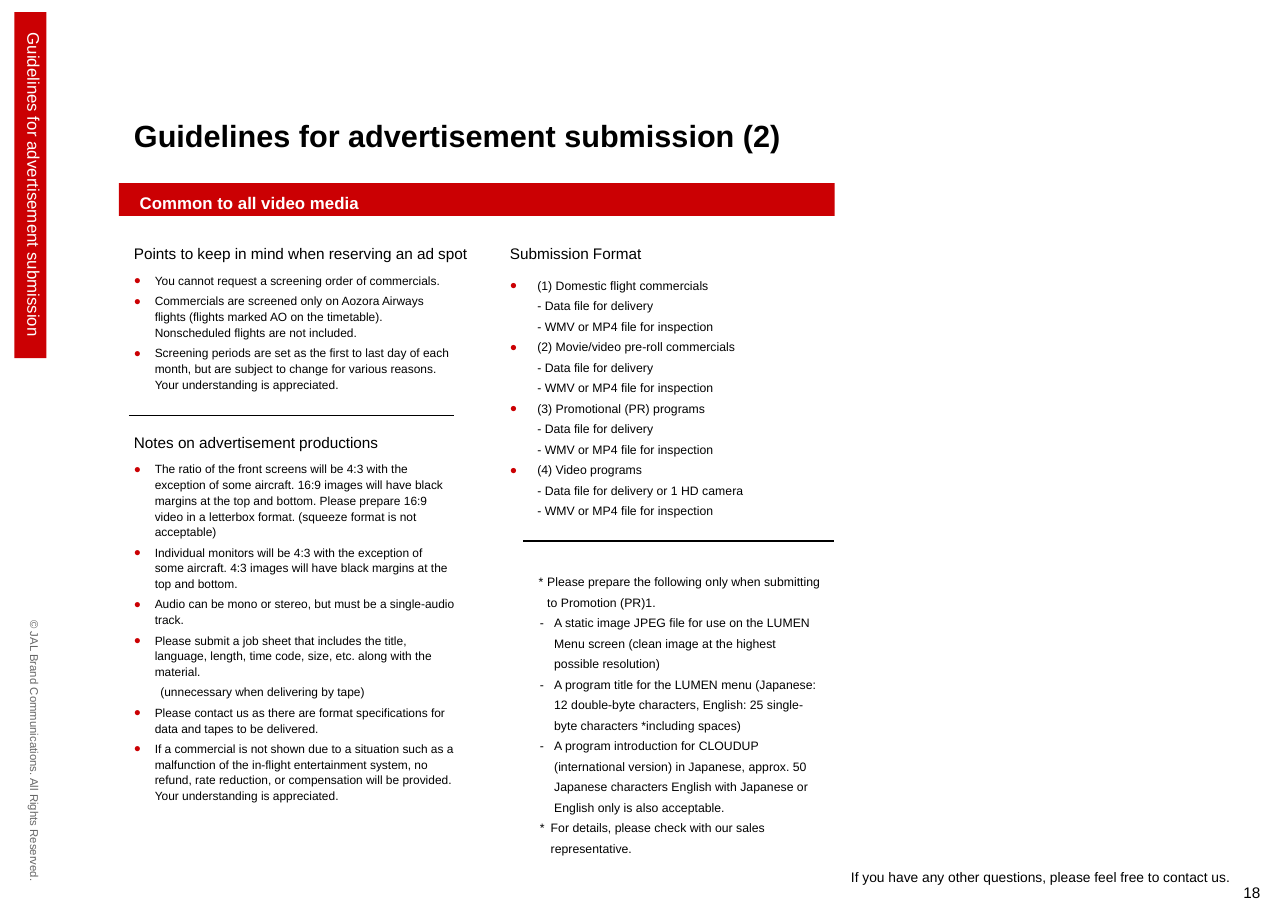
import copy
import pptx
import pptx.util
import pptx.dml.color
import pptx.enum.shapes
import pptx.enum.text
import pptx.oxml.ns
import lxml.etree

Cm = pptx.util.Cm
qn = pptx.oxml.ns.qn
RED, BLACK, WHITE, GREY = "CB0003", "000000", "FFFFFF", "666666"
ALIGN = pptx.enum.text.PP_ALIGN

BOOKING = [
    "You cannot request a screening order of commercials.",
    "Commercials are screened only on Aozora Airways flights (flights marked AO on the timetable). "
    "Nonscheduled flights are not included.",
    "Screening periods are set as the first to last day of each month, but are subject to change "
    "for various reasons.\nYour understanding is appreciated.",
]
PRODUCTION = [
    "The ratio of the front screens will be 4:3 with the exception of some aircraft. 16:9 images "
    "will have black margins at the top and bottom. Please prepare 16:9 video in a letterbox "
    "format. (squeeze format is not acceptable)",
    "Individual monitors will be 4:3 with the exception of some aircraft. 4:3 images will have "
    "black margins at the top and bottom.",
    "Audio can be mono or stereo, but must be a single-audio track.",
    "Please submit a job sheet that includes the title, language, length, time code, size, etc. "
    "along with the material.",
    "(unnecessary when delivering by tape)",
    "Please contact us as there are format specifications for data and tapes to be delivered.",
    "If a commercial is not shown due to a situation such as a malfunction of the in-flight "
    "entertainment system, no refund, rate reduction, or compensation will be provided. "
    "Your understanding is appreciated.",
]
FORMATS = [
    ("(1) Domestic flight commercials", "Data file for delivery"),
    ("(2) Movie/video pre-roll commercials", "Data file for delivery"),
    ("(3) Promotional (PR) programs", "Data file for delivery"),
    ("(4) Video programs", "Data file for delivery or 1 HD camera"),
]
PR_NOTES = [
    ("*\tPlease prepare the following only when submitting to Promotion (PR)1.", 0.2, 0.2),
    ("-\tA static image JPEG file for use on the LUMEN Menu screen (clean image at the highest "
     "possible resolution)", 0.36, 0.33),
    ("-\tA program title for the LUMEN menu (Japanese: 12 double-byte characters, English: "
     "25 single-byte characters *including spaces)", 0.36, 0.33),
    ("-\tA program introduction for CLOUDUP (international version) in Japanese, approx. 50 "
     "Japanese characters English with Japanese or English only is also acceptable.", 0.36, 0.33),
    ("*\tFor details, please check with our sales representative.", 0.28, 0.25),
]


def rgb(value):
    """Turn a hex string into a colour."""
    return pptx.dml.color.RGBColor.from_string(value)


def write(p, text, size=8, color=BLACK, bold=False, align=ALIGN.LEFT, spacing=1.4,
          before=0, left=0, hang=0, bullet=False):
    """Fill one paragraph with formatted text."""
    p.text = text
    pPr = p._p.get_or_add_pPr()
    if left:
        pPr.set("marL", str(Cm(left)))
        pPr.set("indent", str(-Cm(hang)))
    if bullet:
        clr = lxml.etree.SubElement(pPr, qn("a:buClr"))
        lxml.etree.SubElement(clr, qn("a:srgbClr"), val=RED)
        lxml.etree.SubElement(pPr, qn("a:buFont"), typeface="Arial")
        lxml.etree.SubElement(pPr, qn("a:buChar"), char="●")
    p.alignment = align
    p.line_spacing = spacing
    p.space_before = pptx.util.Pt(before)
    for r in p.runs:
        r.font.name = "Arial"
        r.font.size = pptx.util.Pt(size)
        r.font.bold = bold
        r.font.color.rgb = rgb(color)
    for br in p._p.findall(qn("a:br")):
        br.append(copy.deepcopy(p.runs[0]._r.rPr))


class Page:
    """Hold the current slide and draw its elements."""

    def __init__(self, s):
        """Keep the slide."""
        self.s = s

    def band(self, x, y, w, h):
        """Draw a red bar."""
        sp = self.s.shapes.add_shape(pptx.enum.shapes.MSO_SHAPE.RECTANGLE,
                                     Cm(x), Cm(y), Cm(w), Cm(h))
        sp.shadow.inherit = False
        sp.fill.solid()
        sp.fill.fore_color.rgb = rgb(RED)
        sp.line.fill.background()

    def rule(self, x1, x2, y):
        """Draw a thin horizontal line."""
        ln = self.s.shapes.add_connector(pptx.enum.shapes.MSO_CONNECTOR.STRAIGHT,
                                         Cm(x1), Cm(y), Cm(x2), Cm(y))
        ln.line.color.rgb = rgb(BLACK)
        ln.line.width = pptx.util.Pt(0.75)
        lxml.etree.SubElement(ln._element.spPr, qn("a:effectLst"))

    def paragraphs(self, x, y, w, h, items, rotation=0):
        """Add a text box from pairs of text and format."""
        sp = self.s.shapes.add_textbox(Cm(x), Cm(y), Cm(w), Cm(h))
        sp.rotation = rotation
        tf = sp.text_frame
        tf.word_wrap = True
        tf.auto_size = pptx.enum.text.MSO_AUTO_SIZE.SHAPE_TO_FIT_TEXT
        for i, (text, style) in enumerate(items):
            write(tf.add_paragraph() if i else tf.paragraphs[0], text, **style)

    def label(self, x, y, w, h, text, rotation=0, **style):
        """Add a text box with one paragraph."""
        self.paragraphs(x, y, w, h, [(text, style)], rotation)

    def guidelines(self, x, y, w, h, texts):
        """Add a bulleted list, with bracketed remarks indented instead."""
        items = []
        for i, text in enumerate(texts):
            style = dict(size=7.8, spacing=1.1, before=3 if i else 0)
            if text.startswith("("):
                style.update(left=0.61)
            else:
                style.update(left=0.48, hang=0.48, bullet=True)
            items.append((text, style))
        self.paragraphs(x, y, w, h, items)


def main():
    """Build the slide and save it."""
    prs = pptx.Presentation()
    prs.slide_width, prs.slide_height = Cm(29.7), Cm(21)
    page = Page(prs.slides.add_slide(prs.slide_layouts[6]))
    left, right = 2.84, 11.51

    page.label(-3.58, 17.02, 8.74, 0.58, "© JAL Brand Communications. All Rights Reserved.",
               rotation=90, size=7.4, color=GREY, align=ALIGN.CENTER, spacing=1.0)
    page.band(2.74, 4.22, 16.51, 0.76)
    page.label(left, 2.18, 17.42, 1.37, "Guidelines for advertisement submission (2)",
               size=20, bold=True, spacing=1.45)
    page.label(2.97, 4.14, 7.26, 0.86, "Common to all video media",
               size=11, bold=True, color=WHITE)

    for x, y, heading in [(left, 5.33, "Points to keep in mind when reserving an ad spot"),
                          (left, 9.7, "Notes on advertisement productions"),
                          (right, 5.33, "Submission Format")]:
        page.label(x, y, 8.89, 0.81, heading, size=10)

    page.guidelines(left, 6.15, 7.9, 3, BOOKING)
    page.guidelines(left, 10.49, 7.9, 8.23, PRODUCTION)
    page.paragraphs(right, 6.15, 8.59, 5.97, [
        (f"{name}\n- {delivery}\n- WMV or MP4 file for inspection",
         dict(left=0.63, hang=0.63, bullet=True)) for name, delivery in FORMATS])
    page.paragraphs(12.17, 12.98, 7.06, 6.91, [
        (text, dict(left=indent, hang=hang)) for text, indent, hang in PR_NOTES])

    page.rule(2.97, 10.46, 9.58)
    page.rule(12.07, 19.23, 12.47)
    page.label(17.81, 19.74, 10.8, 0.76,
               "If you have any other questions, please feel free to contact us.",
               size=9, align=ALIGN.RIGHT, spacing=1.45)
    page.label(26.87, 20.24, 2.44, 0.66, "18", size=10, align=ALIGN.RIGHT, spacing=1.0)

    page.band(0.33, 0.28, 0.74, 7.98)
    page.label(-3.18, 3.84, 7.87, 1.19, "Guidelines for advertisement submission",
               rotation=90, size=11, color=WHITE, spacing=1.45)
    prs.save("out.pptx")


if __name__ == "__main__":
    main()
